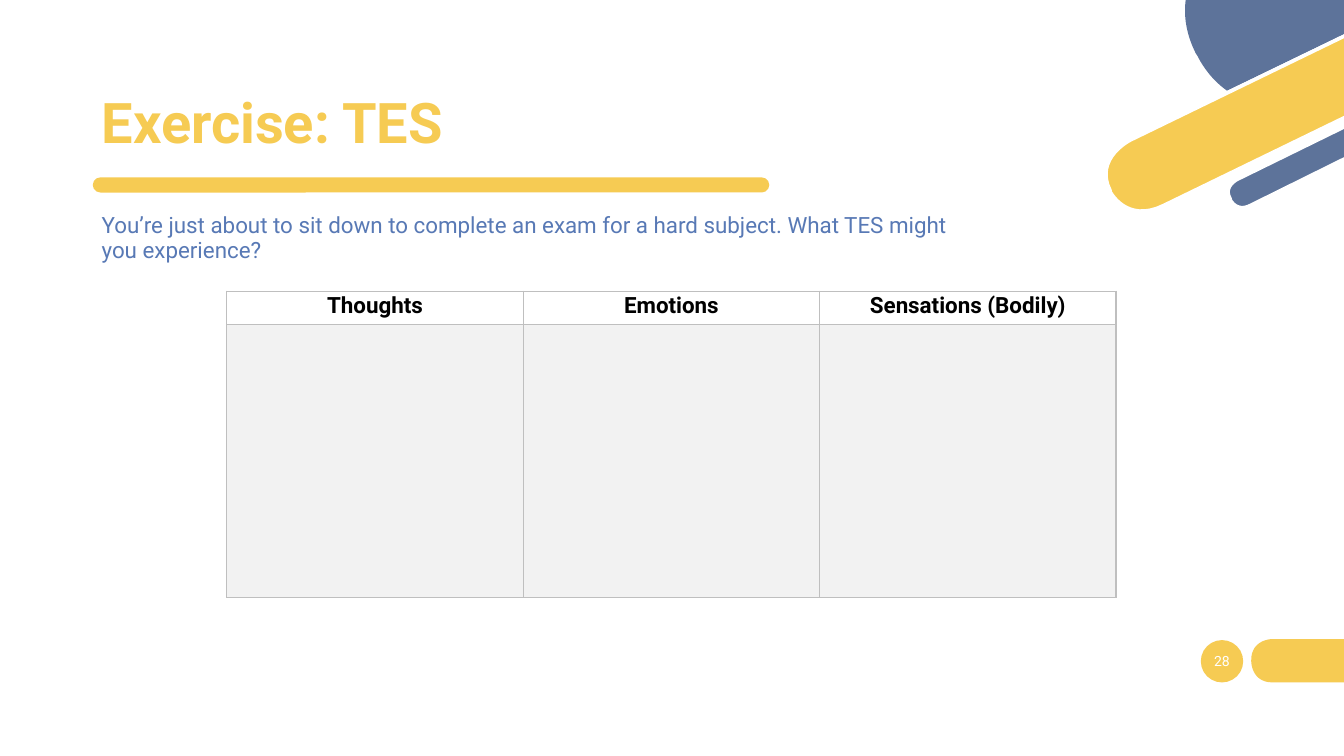
import pptx
import pptx.util
import pptx.dml.color
import pptx.enum.shapes
import pptx.enum.text
import pptx.oxml
import pptx.oxml.ns

Inches = pptx.util.Inches
Shape = pptx.enum.shapes.MSO_SHAPE
Anchor = pptx.enum.text.MSO_ANCHOR
Align = pptx.enum.text.PP_ALIGN

FONT = "Roboto"
COLORS = {
    "yellow": "F6CB53",
    "slate": "5D739A",
    "blue": "5879B5",
    "white": "FFFFFF",
    "black": "000000",
    "cell": "F2F2F2",
    "border": "BFBFBF",
}


def color(name):
    return pptx.dml.color.RGBColor.from_string(COLORS[name])


def paint(shape, fill, outline=None):
    shape.shadow.inherit = False
    shape.fill.solid()
    shape.fill.fore_color.rgb = color(fill)
    if outline:
        shape.line.color.rgb = color(outline)
        shape.line.width = pptx.util.Pt(2.6)
    else:
        shape.line.fill.background()


def add_preset(page, kind, box, fill):
    shape = page.shapes.add_shape(kind, *map(Inches, box))
    paint(shape, fill)
    return shape


def add_outline(page, box, start, steps, fill, outline=None):
    """Steps of two numbers are lines, steps of six are Bezier curves."""
    points = [start]
    for step in steps:
        if len(step) == 2:
            points.append(step)
            continue
        corners = [points[-1], step[:2], step[2:4], step[4:]]
        for i in range(1, 17):
            t = i / 16
            weights = ((1 - t) ** 3, 3 * t * (1 - t) ** 2, 3 * t * t * (1 - t), t ** 3)
            points.append(tuple(
                sum(w * corner[axis] for w, corner in zip(weights, corners))
                for axis in (0, 1)))
    placed = [(Inches(box[0] + x), Inches(box[1] + y)) for x, y in points]
    builder = page.shapes.build_freeform(*placed[0])
    builder.add_line_segments(placed[1:], close=True)
    paint(builder.convert_to_shape(), fill, outline)


def write(frame, text, size, shade, bold=False, align=Align.LEFT, spacing=None):
    frame.word_wrap = True
    para = frame.paragraphs[0]
    para.alignment = align
    if spacing:
        para.line_spacing = spacing
    span = para.add_run()
    span.text = text
    span.font.name = FONT
    span.font.size = pptx.util.Pt(size)
    span.font.bold = bold
    span.font.color.rgb = color(shade)


def add_text(page, box, text, size, shade, anchor=Anchor.TOP, **style):
    frame = page.shapes.add_textbox(*map(Inches, box)).text_frame
    frame.vertical_anchor = anchor
    write(frame, text, size, shade, **style)


def add_corner(page, box):
    # Half disc
    add_outline(page, box, (0.98, 0.56), [
        (0.98, 0.56, 1.07, 0.76, 1.27, 0.9), (2.43, 0.34), (2.43, 0), (0.86, 0),
        (0.84, 0.15, 0.86, 0.33, 0.96, 0.53)], "slate")
    # Wide stripe, then narrow stripe
    add_outline(page, box, (0.31, 1.39), [
        (0.31, 1.39, -0.05, 1.57, 0.11, 1.89), (0.11, 1.9),
        (0.11, 1.9, 0.27, 2.22, 0.64, 2.04), (2.47, 1.15), (2.47, 0.34)],
        "yellow", "white")
    add_outline(page, box, (1.37, 1.78), [
        (1.37, 1.78, 1.23, 1.85, 1.3, 1.97), (1.3, 1.98),
        (1.3, 1.98, 1.36, 2.11, 1.5, 2.04), (2.47, 1.56), (2.47, 1.24)],
        "slate", "white")


def add_heading(page, box):
    left, top, width, height = box
    add_text(page, box, "Exercise: TES", 40, "yellow", Anchor.BOTTOM, bold=True, spacing=0.9)
    rule = add_preset(page, Shape.ROUNDED_RECTANGLE,
                      (left + 0.01, top + height + 0.17, 6.71, 0.15), "yellow")
    rule.adjustments[0] = 0.5


def add_page_number(page, box):
    left, top, width, height = box
    add_preset(page, Shape.OVAL, (left, top, height, height), "yellow")
    add_text(page, (left - 0.09, top + 0.01, 0.6, 0.4), "28", 10, "white",
             Anchor.MIDDLE, align=Align.CENTER)
    # Tab running to the page edge
    add_outline(page, (left + 0.5, top, width, height), (0.21, 0.42), [
        (width - 0.5, 0.42), (width - 0.5, -0.01), (0.21, -0.01),
        (0.21, -0.01, 0, -0.01, 0, 0.2), (0, 0.21),
        (0, 0.21, 0, 0.42, 0.21, 0.42)], "yellow")


def add_borders(cell):
    props = cell._tc.get_or_add_tcPr()
    for index, side in enumerate(("lnL", "lnR", "lnT", "lnB")):
        props.insert(index, pptx.oxml.parse_xml(
            f'<a:{side} {pptx.oxml.ns.nsdecls("a")} w="12700"><a:solidFill>'
            f'<a:srgbClr val="{COLORS["border"]}"/></a:solidFill></a:{side}>'))


def add_answer_table(page, box):
    headers = ("Thoughts", "Emotions", "Sensations (Bodily)")
    table = page.shapes.add_table(2, len(headers), *map(Inches, box)).table
    table.rows[0].height = Inches(0.33)
    table.rows[1].height = Inches(box[3] - 0.33)
    for column, header in enumerate(headers):
        table.columns[column].width = Inches(box[2] / len(headers))
        for row, fill in enumerate(("white", "cell")):
            cell = table.cell(row, column)
            cell.margin_left = cell.margin_right = Inches(0.07)
            cell.margin_top = cell.margin_bottom = 0
            cell.fill.solid()
            cell.fill.fore_color.rgb = color(fill)
            add_borders(cell)
        write(table.cell(0, column).text_frame, header, 16, "black",
              bold=True, align=Align.CENTER, spacing=1.07)


def main():
    deck = pptx.Presentation()
    deck.slide_width, deck.slide_height = Inches(13.33), Inches(7.5)
    page = deck.slides.add_slide(deck.slide_layouts[6])
    add_corner(page, (10.9, 0, 2.43, 2.12))
    add_heading(page, (0.91, 0.85, 11.5, 0.74))
    add_page_number(page, (11.91, 6.35, 1.42, 0.42))
    add_text(page, (0.91, 2.08, 8.83, 0.7),
             "You’re just about to sit down to complete an exam for a hard subject. "
             "What TES might you experience?", 16, "blue", spacing=0.9)
    add_answer_table(page, (2.25, 2.89, 8.82, 3.04))
    deck.save("out.pptx")


if __name__ == "__main__":
    main()
